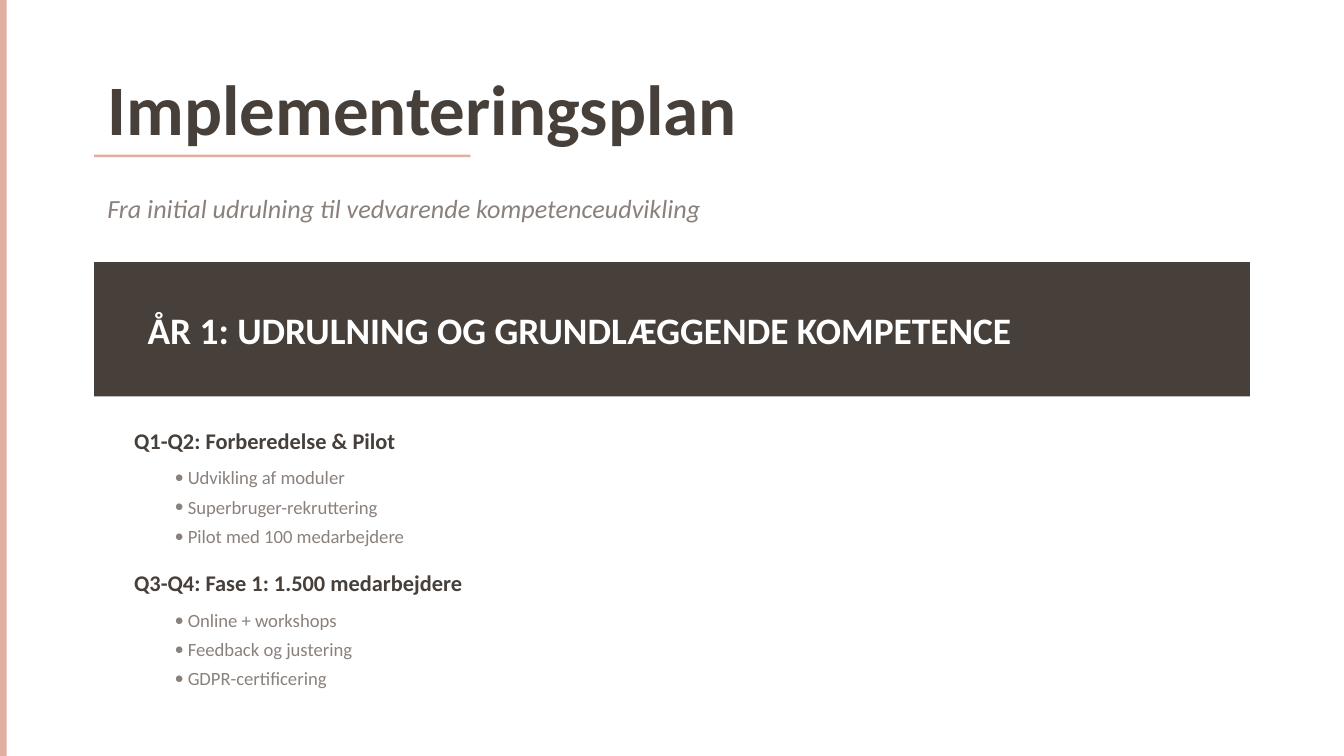
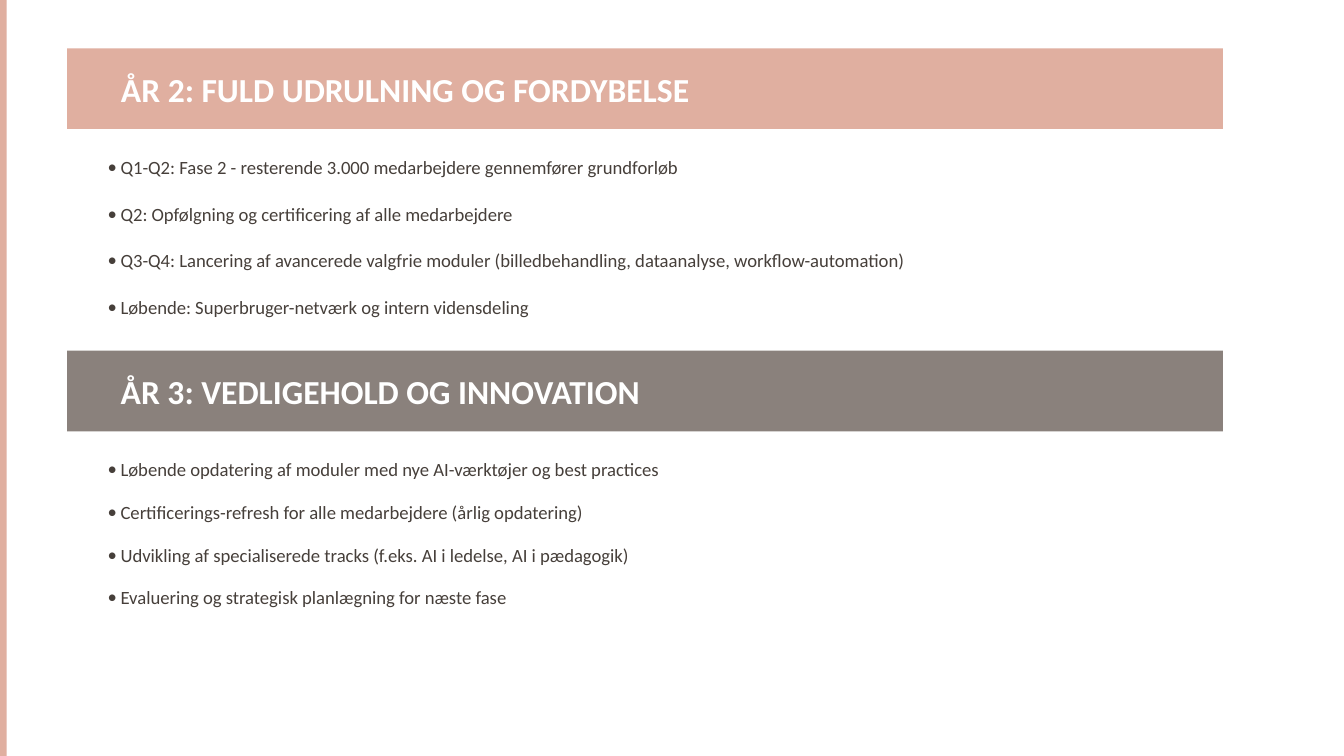
from lxml.etree import SubElement as Sub
from pptx import Presentation as Deck
from pptx.dml.color import RGBColor as RGB
from pptx.enum.shapes import MSO_SHAPE as Kind
from pptx.enum.text import MSO_ANCHOR as Anchor, MSO_AUTO_SIZE as Fit, PP_ALIGN as Align
from pptx.oxml.ns import qn
from pptx.util import Pt

FONT = "Calibri"
COLORS = {"dark": "463F3A", "gray": "8A817C", "rose": "E0AFA0", "white": "FFFFFF"}
WIDE, HIGH = 720, 405
BAND = 619.2    # width of a year band
HANG = 7        # hanging indent of a bullet


def color(name):
    return RGB.from_string(COLORS[name])


def place(shape, left, top, width, height):
    shape.left, shape.top = Pt(left), Pt(top)
    shape.width, shape.height = Pt(width), Pt(height)


def bullet(para):
    props = para._p.get_or_add_pPr()
    props.set("marL", str(Pt(HANG)))
    props.set("indent", str(-Pt(HANG)))
    Sub(props, qn("a:buFont")).set("typeface", FONT)
    Sub(props, qn("a:buChar")).set("char", "•")


def write(shape, text, size=10, tone="dark", bold=False, italic=False,
          anchor=Anchor.MIDDLE, gap=0, dots=False):
    """Fill a shape with text, one paragraph per line."""
    frame = shape.text_frame
    frame.text = text
    frame.word_wrap = True
    frame.auto_size = Fit.NONE
    frame.vertical_anchor = anchor
    for num, para in enumerate(frame.paragraphs):
        if dots:
            bullet(para)
        para.alignment = Align.LEFT
        para.space_before = Pt(gap if num else 0)
        font = para.runs[0].font
        font.name, font.size = FONT, Pt(size)
        font.bold, font.italic = bold, italic
        font.color.rgb = color(tone)


def label(slide, box, text, **style):
    write(slide.shapes.add_textbox(*map(Pt, box)), text, **style)


def title(slide, box, text, **style):
    place(slide.shapes.title, *box)
    write(slide.shapes.title, text, bold=True, **style)


def items(slide, num, box, lines, **style):
    body = slide.placeholders[num]
    place(body, *box)
    write(body, "\n".join(lines), dots=True, **style)


def block(slide, left, top, width, height, tone):
    """Draw a plain rectangle behind the text."""
    rect = slide.shapes.add_shape(Kind.RECTANGLE, *map(Pt, (left, top, width, height)))
    rect.shadow.inherit = False
    rect.fill.solid()
    rect.fill.fore_color.rgb = color(tone)
    rect.line.fill.background()
    slide.shapes._spTree.insert(2, rect._element)


def start(deck):
    """Add a two-list slide with the rose edge."""
    slide = deck.slides.add_slide(deck.slide_layouts[3])
    slide.background.fill.solid()
    slide.background.fill.fore_color.rgb = color("white")
    block(slide, 0, 0, 3.6, HIGH, "rose")
    return slide


def first(deck):
    slide = start(deck)
    # Title and subtitle
    title(slide, (50.4, 36, 648, 43.2), "Implementeringsplan", size=38)
    block(slide, 50.4, 82.8, 201.6, 1.44, "rose")
    label(slide, (50.4, 100.8, 612, 21.6),
          "Fra initial udrulning til vedvarende kompetenceudvikling",
          size=14, tone="gray", italic=True)
    # Year band
    block(slide, 50.4, 140.4, BAND, 72, "dark")
    label(slide, (72, 158.4, 576, 36), "ÅR 1: UDRULNING OG GRUNDLÆGGENDE KOMPETENCE",
          size=20, tone="white", bold=True)
    # Half-year phases
    phases = [
        ("Q1-Q2: Forberedelse & Pilot",
         ["Udvikling af moduler", "Superbruger-rekruttering",
          "Pilot med 100 medarbejdere"]),
        ("Q3-Q4: Fase 1: 1.500 medarbejdere",
         ["Online + workshops", "Feedback og justering", "GDPR-certificering"]),
    ]
    for num, (head, lines) in enumerate(phases):
        top = 226.8 + num * 76.32
        label(slide, (64.8, top, 590.4, 18), head, size=12, bold=True)
        items(slide, num + 1, (86.4, top + 21.6, 568.8, 46.08), lines,
              tone="gray", gap=3.64)


def second(deck):
    slide = start(deck)
    years = [
        (title, "ÅR 2: FULD UDRULNING OG FORDYBELSE", "rose", 25.2,
         ["Q1-Q2: Fase 2 - resterende 3.000 medarbejdere gennemfører grundforløb",
          "Q2: Opfølgning og certificering af alle medarbejdere",
          "Q3-Q4: Lancering af avancerede valgfrie moduler "
          "(billedbehandling, dataanalyse, workflow-automation)",
          "Løbende: Superbruger-netværk og intern vidensdeling"]),
        (partial_label, "ÅR 3: VEDLIGEHOLD OG INNOVATION", "gray", 23.04,
         ["Løbende opdatering af moduler med nye AI-værktøjer og best practices",
          "Certificerings-refresh for alle medarbejdere (årlig opdatering)",
          "Udvikling af specialiserede tracks (f.eks. AI i ledelse, AI i pædagogik)",
          "Evaluering og strategisk planlægning for næste fase"]),
    ]
    for num, (draw, head, tone, pitch, lines) in enumerate(years):
        top = 25.92 + num * 162
        block(slide, 36, top, BAND, 43.2, tone)
        draw(slide, (57.6, top + 10.8, 576, 21.6), head, size=18, tone="white")
        items(slide, num + 1, (50.4, top + 54, 590.4, pitch * 4), lines,
              anchor=Anchor.TOP, gap=pitch - 12.2)


def partial_label(slide, box, text, **style):
    label(slide, box, text, bold=True, **style)


def main():
    deck = Deck()
    deck.slide_width, deck.slide_height = Pt(WIDE), Pt(HIGH)
    first(deck)
    second(deck)
    deck.save("out.pptx")


if __name__ == "__main__":
    main()
